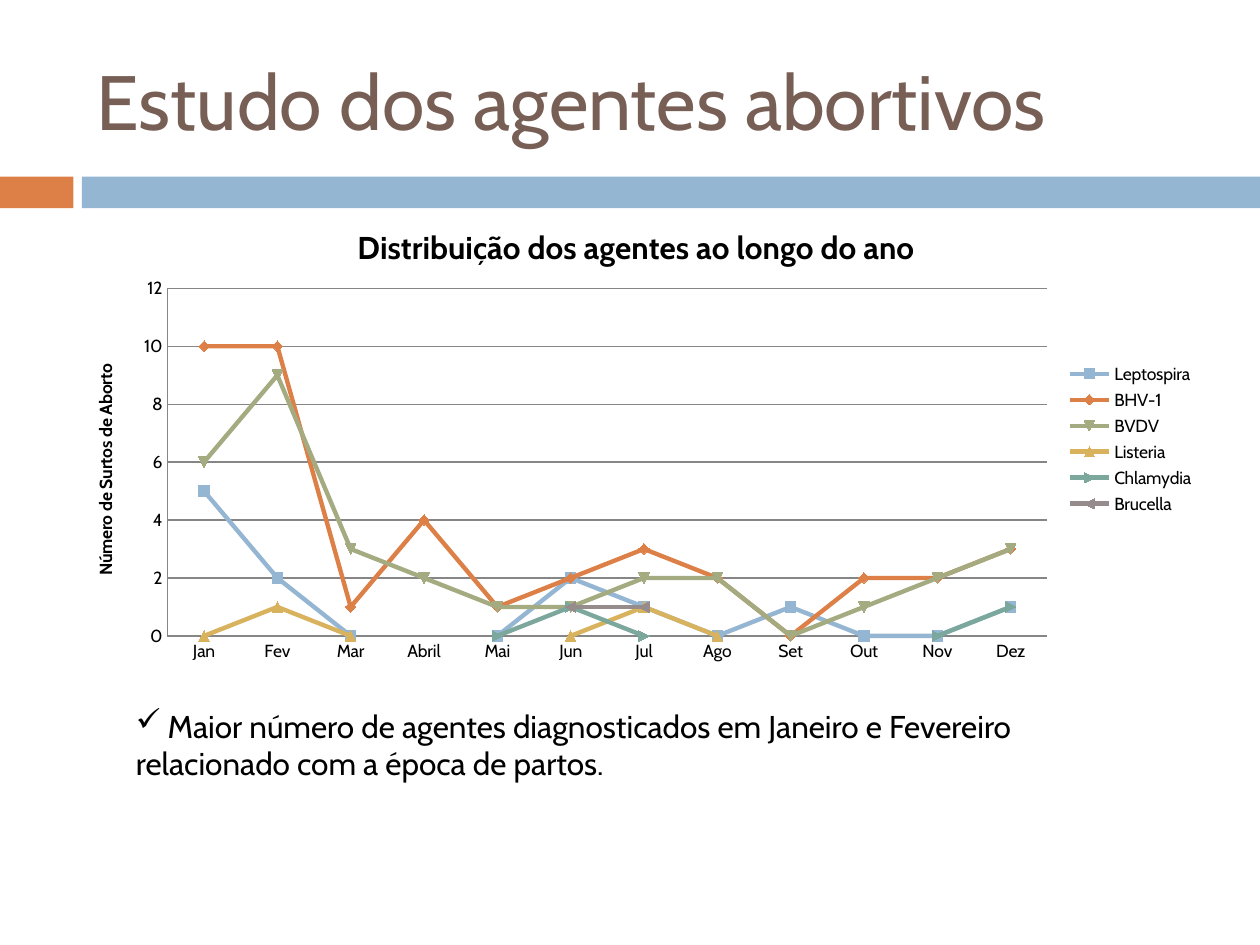
from dataclasses import dataclass

from lxml.etree import SubElement
from pptx import Presentation
from pptx.chart.data import CategoryChartData
from pptx.dml.color import RGBColor
from pptx.enum.chart import XL_CHART_TYPE, XL_LEGEND_POSITION, XL_TICK_MARK
from pptx.enum.shapes import MSO_SHAPE
from pptx.enum.text import MSO_ANCHOR
from pptx.oxml import parse_xml
from pptx.oxml.ns import nsdecls, qn
from pptx.util import Cm, Pt


@dataclass(frozen=True)
class Theme:
    font: str = "Cabin"
    title: str = "775F55"
    text: str = "000000"
    orange: str = "DD8047"
    blue: str = "94B6D2"
    grid: str = "868686"
    series: tuple = ("94B6D2", "DD8047", "A5AB81", "D8B25C", "7BA79D", "968C8C")
    title_size: int = 44
    body_size: int = 18
    chart_size: int = 10


T = Theme()
WIDTH, HEIGHT = 25.4, 19.05

MONTHS = ["Jan", "Fev", "Mar", "Abril", "Mai", "Jun",
          "Jul", "Ago", "Set", "Out", "Nov", "Dez"]
N = None
OUTBREAKS = {
    "Leptospira": [5, 2, 0, N, 0, 2, 1, 0, 1, 0, 0, 1],
    "BHV-1": [10, 10, 1, 4, 1, 2, 3, 2, 0, 2, 2, 3],
    "BVDV": [6, 9, 3, 2, 1, 1, 2, 2, 0, 1, 2, 3],
    "Listeria": [0, 1, 0, N, N, 0, 1, 0, N, N, N, N],
    "Chlamydia": [N, N, N, N, 0, 1, 0, N, N, N, 0, 1],
    "Brucella": [N, N, N, N, N, 1, 1, N, N, N, N, N],
}


def rgb(color):
    return RGBColor.from_string(color)


def style_font(font, size, color=T.text, bold=False):
    font.name, font.size, font.bold = T.font, Pt(size), bold
    font.color.rgb = rgb(color)


def add_text(s, box, text, size, color, anchor=MSO_ANCHOR.TOP):
    tf = s.shapes.add_textbox(*map(Cm, box)).text_frame
    tf.word_wrap = True
    tf.vertical_anchor = anchor
    p = tf.paragraphs[0]
    r = p.add_run()
    r.text = text
    style_font(r.font, size, color)
    return p


def add_band(s, box, split=1.48, gap=0.17):
    """Short orange block, then a blue bar across the rest of the box."""
    left, top, width, height = box
    start = split + gap
    for x, w, color in ((left, split, T.orange),
                        (left + start, width - start, T.blue)):
        sp = s.shapes.add_shape(MSO_SHAPE.RECTANGLE,
                                Cm(x), Cm(top), Cm(w), Cm(height))
        sp.shadow.inherit = False
        sp.fill.solid()
        sp.fill.fore_color.rgb = rgb(color)
        sp.line.fill.background()


def add_chart_title(owner, text, size):
    tf = owner.text_frame
    r = tf.paragraphs[0].add_run()
    r.text = text
    style_font(r.font, size, bold=True)


def set_plot_area(chart, x, y, w, h):
    """Fix the inner plot area, as fractions of the chart."""
    layout = parse_xml(
        f'<c:layout {nsdecls("c")}><c:manualLayout><c:layoutTarget val="inner"/>'
        '<c:xMode val="edge"/><c:yMode val="edge"/>'
        f'<c:x val="{x}"/><c:y val="{y}"/><c:w val="{w}"/><c:h val="{h}"/>'
        '</c:manualLayout></c:layout>')
    area = chart.element.find(".//" + qn("c:plotArea"))
    for old in area.findall(qn("c:layout")):
        area.remove(old)
    area.insert(0, layout)


def add_outbreak_chart(s, box):
    data = CategoryChartData(number_format="General")
    data.categories = MONTHS
    for name, values in OUTBREAKS.items():
        data.add_series(name, values)
    chart = s.shapes.add_chart(XL_CHART_TYPE.LINE_MARKERS,
                               *map(Cm, box), data).chart
    style_font(chart.font, T.chart_size)
    chart.has_title = True
    add_chart_title(chart.chart_title, "Distribuição dos agentes ao longo do ano",
                    T.body_size)
    chart.chart_title.include_in_layout = False
    set_plot_area(chart, 0.09, 0.18, 0.77, 0.74)

    # Legend
    chart.has_legend = True
    chart.legend.position = XL_LEGEND_POSITION.RIGHT
    chart.legend.include_in_layout = False

    # Axes
    val = chart.value_axis
    val.minimum_scale, val.maximum_scale, val.major_unit = 0, 12, 2
    val.has_major_gridlines = True
    val.has_title = True
    add_chart_title(val.axis_title, "Número de Surtos de Aborto", T.chart_size)
    for axis in (chart.category_axis, val):
        axis.major_tick_mark = axis.minor_tick_mark = XL_TICK_MARK.NONE
    for owner in (chart.category_axis, val, val.major_gridlines):
        owner.format.line.color.rgb = rgb(T.grid)
        owner.format.line.width = Pt(0.75)

    # Series
    chart.plots[0].vary_by_categories = False
    for series, color in zip(chart.plots[0].series, T.series):
        series.smooth = False
        series.format.line.color.rgb = rgb(color)
        series.format.line.width = Pt(2.5)
        series.marker.size = 6
        fmt = series.marker.format
        fmt.fill.solid()
        fmt.fill.fore_color.rgb = rgb(color)
        fmt.line.color.rgb = rgb(color)


def add_conclusion(s, box):
    p = add_text(s, box, " Maior número de agentes diagnosticados em Janeiro e "
                 "Fevereiro relacionado com a época de partos.",
                 T.body_size, T.text)
    SubElement(p._p.get_or_add_pPr(), qn("a:buChar")).set("char", "✓")


def main():
    prs = Presentation()
    prs.slide_width, prs.slide_height = Cm(WIDTH), Cm(HEIGHT)
    s = prs.slides.add_slide(prs.slide_layouts[6])
    add_band(s, (0, 3.56, WIDTH, 0.64))
    add_text(s, (1.7, 0.64, 22.66, 2.74), "Estudo dos agentes abortivos",
             T.title_size, T.title, MSO_ANCHOR.MIDDLE)
    add_outbreak_chart(s, (1.3, 4.11, 23.04, 9.47))
    add_conclusion(s, (2.49, 14.12, 21, 1.8))
    prs.save("out.pptx")


if __name__ == "__main__":
    main()
